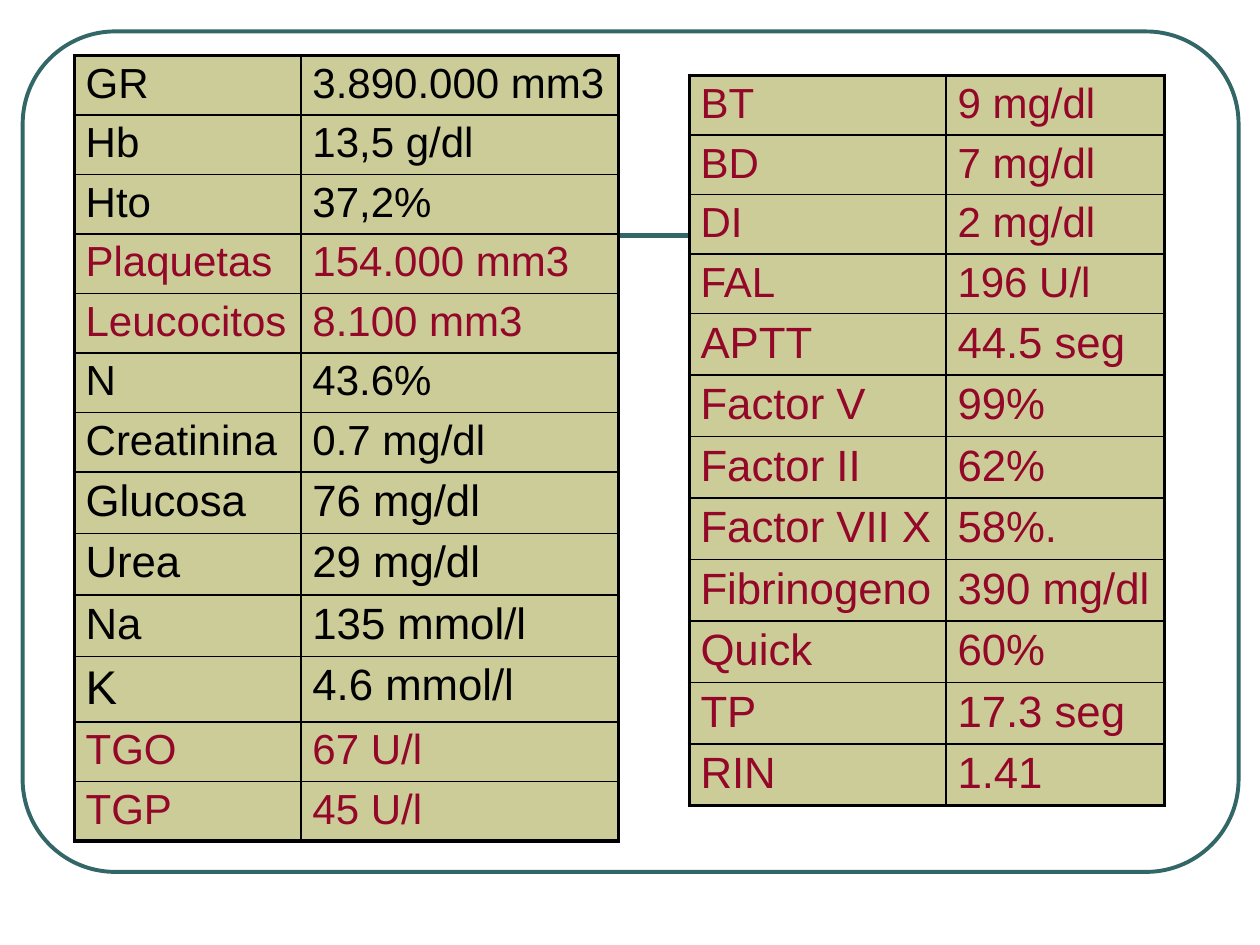
from typing import NamedTuple

from lxml import etree
from pptx import Presentation
from pptx.dml.color import RGBColor
from pptx.enum import shapes
from pptx.oxml import ns
from pptx.util import Inches, Pt

TEAL = RGBColor(0x33, 0x66, 0x66)
KHAKI = RGBColor(0xCC, 0xCC, 0x99)
BLACK = RGBColor(0, 0, 0)
CRIMSON = RGBColor(0x93, 0x07, 0x28)
OUTER, INNER = 2.25, 1


class Result(NamedTuple):
    test: str
    value: str
    color: RGBColor = CRIMSON
    size: int = 24
    test_size: int = 0  # 0 means the same as size


class Panel(NamedTuple):
    left: float
    top: float
    widths: tuple[float, float]
    results: list[Result]


BLOOD_COUNT = Panel(0.59, 0.44, (1.8, 2.52), [
    Result("GR", "3.890.000 mm3", BLACK),
    Result("Hb", "13,5 g/dl", BLACK),
    Result("Hto", "37,2%", BLACK),
    Result("Plaquetas", "154.000 mm3"),
    Result("Leucocitos", "8.100 mm3"),
    Result("N", "43.6%", BLACK),
    Result("Creatinina", "0.7 mg/dl", BLACK),
    Result("Glucosa", "76 mg/dl", BLACK, 25),
    Result("Urea", "29 mg/dl", BLACK, 25),
    Result("Na", "135 mmol/l", BLACK, 25),
    Result("K", "4.6 mmol/l", BLACK, 25, 27),
    Result("TGO", "67 U/l"),
    Result("TGP", "45 U/l"),
])
LIVER = Panel(5.47, 0.6, (2.04, 1.73), [
    Result("BT", "9 mg/dl"),
    Result("BD", "7 mg/dl"),
    Result("DI", "2 mg/dl"),
    Result("FAL", "196 U/l"),
    Result("APTT", "44.5 seg", size=25),
    Result("Factor V", "99%", size=25),
    Result("Factor II", "62%", size=25),
    Result("Factor VII X", "58%.", size=25),
    Result("Fibrinogeno", "390 mg/dl", size=25),
    Result("Quick", "60%", size=25),
    Result("TP", "17.3 seg", size=25),
    Result("RIN", "1.41", size=25),
])


def set_borders(cell, widths: dict[str, float]) -> None:
    """Put the border lines, which must precede the fill, into the cell."""
    properties = cell._tc.get_or_add_tcPr()
    for position, (side, width) in enumerate(widths.items()):
        border = etree.Element(ns.qn(f"a:ln{side}"), w=str(Pt(width)))
        fill = etree.SubElement(border, ns.qn("a:solidFill"))
        etree.SubElement(fill, ns.qn("a:srgbClr"), val=str(BLACK))
        properties.insert(position, border)


def fill_cell(cell, wording: str, size: int, color: RGBColor) -> None:
    cell.fill.solid()
    cell.fill.fore_color.rgb = KHAKI
    cell.margin_left = cell.margin_right = Inches(0.09)
    cell.margin_top = cell.margin_bottom = Inches(0.04)
    cell.text_frame.text = wording
    font = cell.text_frame.paragraphs[0].runs[0].font
    font.name = "Arial"
    font.size = Pt(size)
    font.color.rgb = color


def row_height(size: int) -> int:
    """One line of text plus the cell margins."""
    return Pt(size * 1.15 + 6.4)


def add_panel(slide, panel: Panel) -> None:
    heights = [row_height(max(r.size, r.test_size)) for r in panel.results]
    table = slide.shapes.add_table(
        len(heights), 2, Inches(panel.left), Inches(panel.top),
        Inches(sum(panel.widths)), sum(heights)).table
    table.first_row = table.horz_banding = False
    for column, width in zip(table.columns, panel.widths):
        column.width = Inches(width)

    last = len(heights) - 1
    for i, result in enumerate(panel.results):
        table.rows[i].height = heights[i]
        test, value = table.cell(i, 0), table.cell(i, 1)
        fill_cell(test, result.test, result.test_size or result.size, result.color)
        fill_cell(value, result.value, result.size, result.color)
        edges = {"T": OUTER if i == 0 else INNER,
                 "B": OUTER if i == last else INNER}
        set_borders(test, {"L": OUTER, "R": INNER, **edges})
        set_borders(value, {"L": INNER, "R": OUTER, **edges})


def add_frame(slide) -> None:
    frame = slide.shapes.add_shape(
        shapes.MSO_SHAPE.ROUNDED_RECTANGLE,
        Inches(0.18), Inches(0.25), Inches(9.65), Inches(6.67))
    frame.adjustments[0] = 0.11
    frame.shadow.inherit = False
    frame.fill.background()
    frame.line.color.rgb = TEAL
    frame.line.width = Pt(2.25)

    rule = slide.shapes.add_connector(
        shapes.MSO_CONNECTOR.STRAIGHT,
        Inches(0.83), Inches(1.87), Inches(9.25), Inches(1.87))
    rule.line.color.rgb = TEAL
    rule.line.width = Pt(3)
    etree.SubElement(rule._element.spPr, ns.qn("a:effectLst"))


def main() -> None:
    deck = Presentation()
    deck.slide_width, deck.slide_height = Inches(10), Inches(7.5)
    slide = deck.slides.add_slide(deck.slide_layouts[6])
    add_frame(slide)
    for panel in (BLOOD_COUNT, LIVER):
        add_panel(slide, panel)
    deck.save("out.pptx")


if __name__ == "__main__":
    main()
